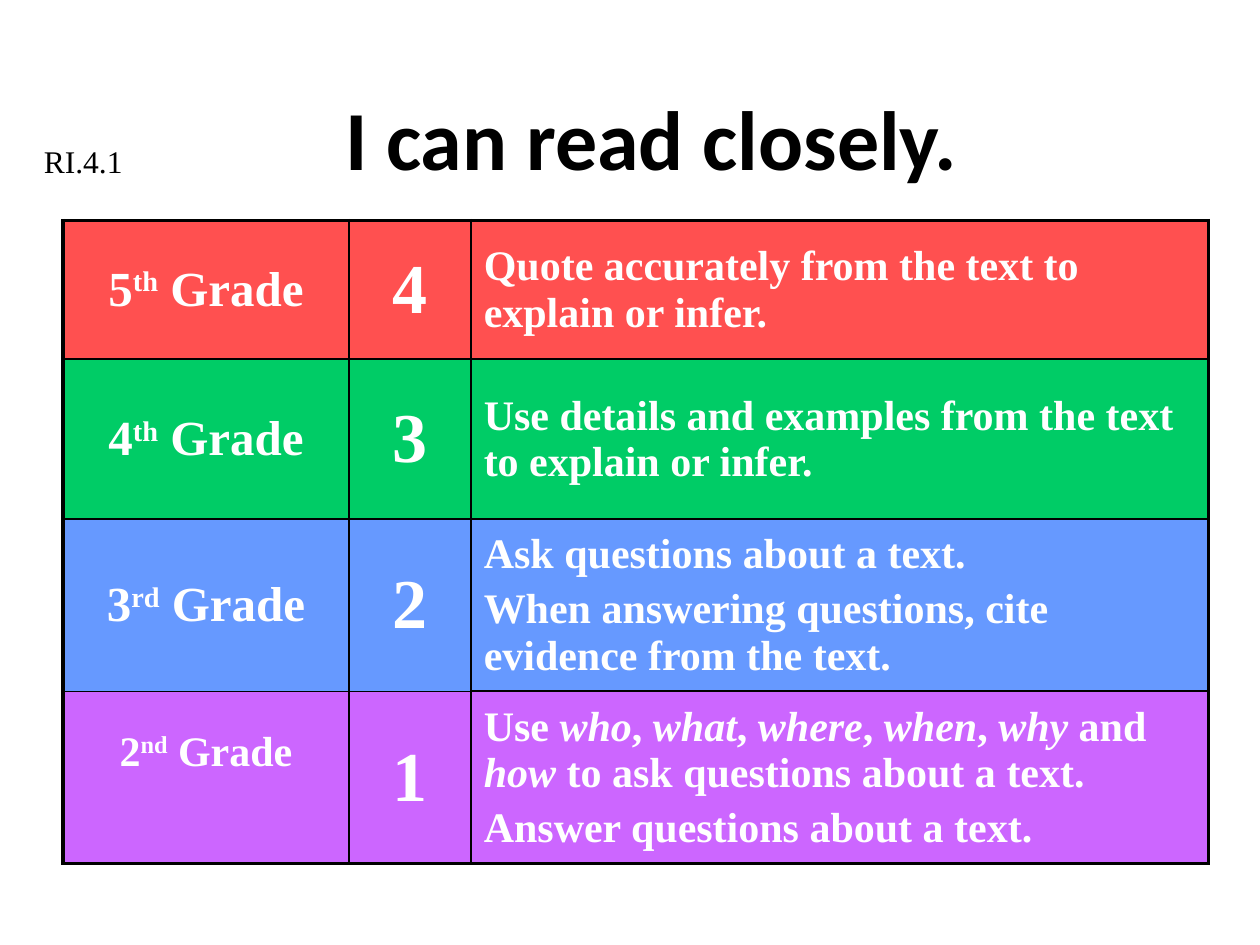
from lxml import etree
from pptx import Presentation
from pptx.dml.color import RGBColor
from pptx.enum.text import MSO_ANCHOR, PP_ALIGN
from pptx.oxml.ns import qn
from pptx.util import Inches, Pt

MIDDLE = MSO_ANCHOR.MIDDLE
CENTER, LEFT = PP_ALIGN.CENTER, PP_ALIGN.LEFT

BLACK = RGBColor(0x00, 0x00, 0x00)
WHITE = RGBColor(0xFF, 0xFF, 0xFF)
RED = RGBColor(0xFF, 0x50, 0x50)
GREEN = RGBColor(0x00, 0xCC, 0x66)
BLUE = RGBColor(0x66, 0x99, 0xFF)
PURPLE = RGBColor(0xCC, 0x66, 0xFF)

SERIF = "Times New Roman"
COL_WIDTHS = (2.27, 0.97, 5.85)
ROW_HEIGHTS = (1.1, 1.27, 1.27, 1.27)
VERTICAL_LINES = (2.25, 1, 1, 2.25)
LABEL_LINES = (2.25, 1.5, 1, 1, 1.5)
SKILL_LINES = (2.25, 1.5, 1.5, 1.5, 1.5)

LEVELS = [
    (RED, "5", "th", 28, "4",
     [["Quote accurately from the text to explain or infer."]]),
    (GREEN, "4", "th", 28, "3",
     [["Use details and examples from the text to explain or infer."]]),
    (BLUE, "3", "rd", 28, "2",
     [["Ask questions about a text."],
      ["When answering questions, cite evidence from the text."]]),
    (PURPLE, "2", "nd", 24, "1",
     [["Use ", "who", ", ", "what", ", ", "where", ", ", "when", ", ",
       "why", " and ", "how", " to ask questions about a text."],
      ["Answer questions about a text."]]),
]


def add_run(p, text, size, color, font=SERIF, bold=False):
    r = p.add_run()
    r.text = text
    r.font.name = font
    r.font.size = Pt(size)
    r.font.bold = bold
    r.font.color.rgb = color
    return r


def add_label(slide, box, text, size, font=SERIF, bold=False, align=LEFT, anchor=None):
    sp = slide.shapes.add_textbox(*[Inches(v) for v in box])
    tf = sp.text_frame
    tf.word_wrap = True
    tf.vertical_anchor = anchor
    p = tf.paragraphs[0]
    p.alignment = align
    add_run(p, text, size, BLACK, font, bold)


def style_cell(cell, fill, borders):
    tcPr = cell._tc.get_or_add_tcPr()
    for side, width in zip("LRTB", borders):
        ln = etree.SubElement(tcPr, qn(f"a:ln{side}"), w=str(Pt(width)))
        solid = etree.SubElement(ln, qn("a:solidFill"))
        etree.SubElement(solid, qn("a:srgbClr"), val=str(BLACK))
    cell.fill.solid()
    cell.fill.fore_color.rgb = fill
    cell.vertical_anchor = MIDDLE


def fill_grade(cell, number, suffix, size):
    p = cell.text_frame.paragraphs[0]
    p.alignment = CENTER
    for text in (number, suffix, " Grade"):
        r = add_run(p, text, size, WHITE, bold=True)
        if text == suffix:
            r.font._element.set("baseline", "30000")


def fill_score(cell, score):
    p = cell.text_frame.paragraphs[0]
    p.alignment = CENTER
    add_run(p, score, 40, WHITE, bold=True)


def fill_skills(cell, skills):
    tf = cell.text_frame
    for i, parts in enumerate(skills):
        p = tf.add_paragraph() if i else tf.paragraphs[0]
        if i:
            p.space_before = Pt(4.8)
        for j, text in enumerate(parts):
            r = add_run(p, text, 24, WHITE, bold=True)
            r.font.italic = j % 2 == 1


def add_rubric(slide, left, top):
    frame = slide.shapes.add_table(
        len(LEVELS), len(COL_WIDTHS), Inches(left), Inches(top),
        Inches(sum(COL_WIDTHS)), Inches(sum(ROW_HEIGHTS)))
    table = frame.table
    table.first_row = False
    table.horz_banding = False
    for col, width in zip(table.columns, COL_WIDTHS):
        col.width = Inches(width)
    for i, (color, number, suffix, size, score, skills) in enumerate(LEVELS):
        table.rows[i].height = Inches(ROW_HEIGHTS[i])
        grade_cell, score_cell, skill_cell = table.rows[i].cells
        for j, cell in enumerate((grade_cell, score_cell, skill_cell)):
            lines = SKILL_LINES if cell is skill_cell else LABEL_LINES
            style_cell(cell, color, VERTICAL_LINES[j:j + 2] + lines[i:i + 2])
        fill_grade(grade_cell, number, suffix, size)
        fill_score(score_cell, score)
        fill_skills(skill_cell, skills)
    table.cell(len(LEVELS) - 1, 0).margin_bottom = Inches(0.45)


def main():
    prs = Presentation()
    prs.slide_width, prs.slide_height = Inches(10), Inches(7.5)
    slide = prs.slides.add_slide(prs.slide_layouts[6])
    add_label(slide, (0.92, 0.25, 8.5, 1.67), "I can read closely.", 48,
              "Calibri", True, CENTER, MIDDLE)
    add_rubric(slide, 0.5, 1.75)
    add_label(slide, (0.25, 1.08, 1.42, 0.4), "RI.4.1", 18)
    prs.save("out.pptx")


if __name__ == "__main__":
    main()
